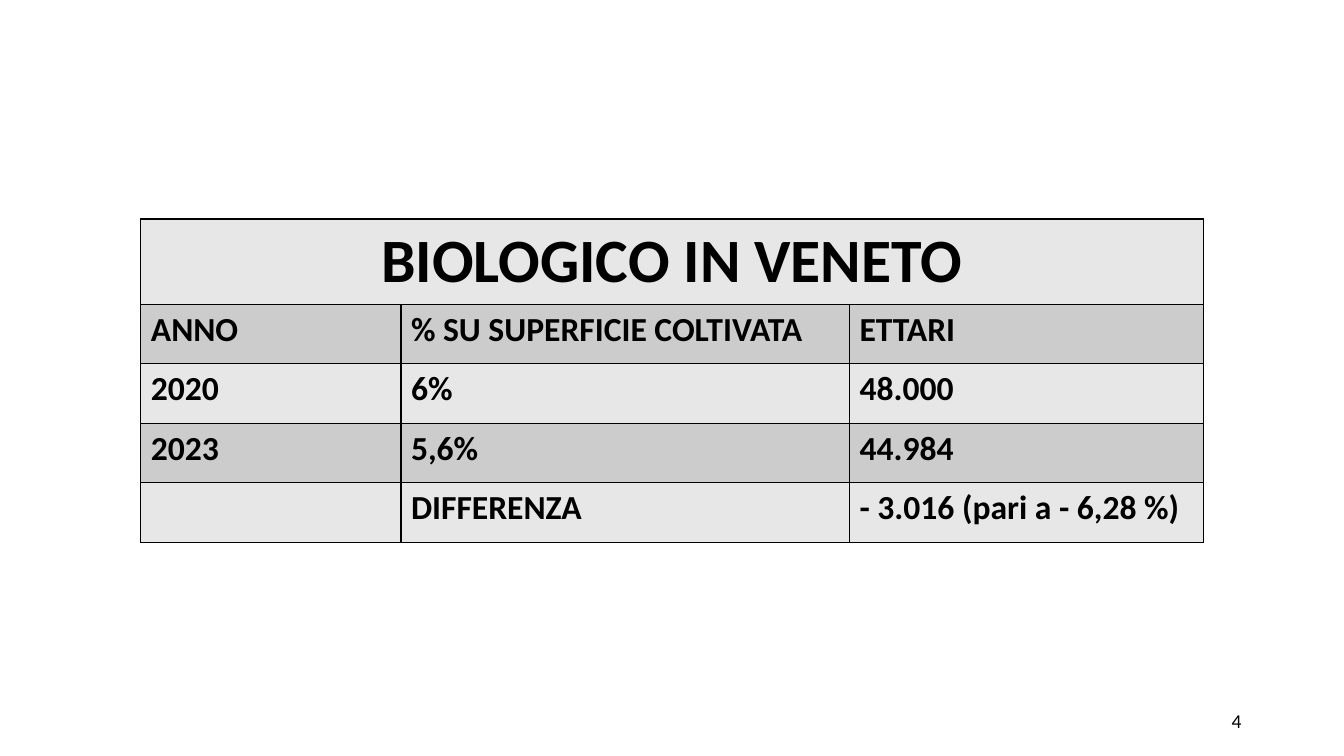
import dataclasses

import lxml.etree
import pptx
import pptx.dml.color
import pptx.enum.text
import pptx.oxml.ns
import pptx.util

Pt = pptx.util.Pt
Align = pptx.enum.text.PP_ALIGN
Anchor = pptx.enum.text.MSO_ANCHOR


@dataclasses.dataclass(frozen=True)
class Theme:
    font: str = "Calibri"
    ink: str = "000000"
    light_row: str = "E7E7E7"
    dark_row: str = "CCCCCC"
    title_size: int = 44
    body_size: int = 24
    number_size: int = 14
    border_width: int = 1


THEME = Theme()
TITLE = "BIOLOGICO IN VENETO"
ROWS = [
    ["ANNO", "% SU SUPERFICIE COLTIVATA", "ETTARI"],
    ["2020", "6%", "48.000"],
    ["2023", "5,6%", "44.984"],
    ["", "DIFFERENZA", "- 3.016 (pari a - 6,28 %)"],
]
COLUMN_WIDTHS = [185.8, 320.4, 252.7]
TITLE_HEIGHT = 61


def write_text(text_frame, text, size, bold=False, alignment=Align.LEFT):
    text_frame.text = text
    paragraph = text_frame.paragraphs[0]
    paragraph.alignment = alignment
    for run in paragraph.runs:
        run.font.name = THEME.font
        run.font.size = Pt(size)
        run.font.bold = bold
        run.font.color.rgb = pptx.dml.color.RGBColor.from_string(THEME.ink)


def draw_borders(cell):
    properties = cell._tc.get_or_add_tcPr()
    qn = pptx.oxml.ns.qn
    for side in ("a:lnL", "a:lnR", "a:lnT", "a:lnB"):
        line = lxml.etree.SubElement(properties, qn(side), w=str(Pt(THEME.border_width)))
        fill = lxml.etree.SubElement(line, qn("a:solidFill"))
        lxml.etree.SubElement(fill, qn("a:srgbClr"), val=THEME.ink)


def style_cell(cell, color):
    draw_borders(cell)
    cell.fill.solid()
    cell.fill.fore_color.rgb = pptx.dml.color.RGBColor.from_string(color)


def add_organic_table(slide, left, top, width, height):
    frame = slide.shapes.add_table(
        len(ROWS) + 1, len(COLUMN_WIDTHS), Pt(left), Pt(top), Pt(width), Pt(height)
    )
    table = frame.table
    table.first_row = False
    table.horz_banding = False
    for column, share in zip(table.columns, COLUMN_WIDTHS):
        column.width = Pt(width * share / sum(COLUMN_WIDTHS))
    for index, row in enumerate(table.rows):
        row.height = Pt((height - TITLE_HEIGHT) / len(ROWS) if index else TITLE_HEIGHT)
        for cell in row.cells:
            style_cell(cell, THEME.dark_row if index % 2 else THEME.light_row)

    title_cell = table.cell(0, 0)
    title_cell.merge(table.cell(0, len(COLUMN_WIDTHS) - 1))
    write_text(title_cell.text_frame, TITLE, THEME.title_size, True, Align.CENTER)
    for row_index, texts in enumerate(ROWS, start=1):
        for column_index, text in enumerate(texts):
            cell = table.cell(row_index, column_index)
            write_text(cell.text_frame, text, THEME.body_size, True)


def add_slide_number(slide, number, left, top, width, height):
    box = slide.shapes.add_textbox(Pt(left), Pt(top), Pt(width), Pt(height))
    box.text_frame.word_wrap = True
    box.text_frame.vertical_anchor = Anchor.MIDDLE
    write_text(box.text_frame, number, THEME.number_size, alignment=Align.RIGHT)


def main():
    presentation = pptx.Presentation()
    presentation.slide_width = Pt(960)
    presentation.slide_height = Pt(540)
    slide = presentation.slides.add_slide(presentation.slide_layouts[6])
    add_slide_number(slide, "4", 678, 500.5, 216, 28.8)
    add_organic_table(slide, 100.6, 156.4, 758.9, 231)
    presentation.save("out.pptx")


if __name__ == "__main__":
    main()
